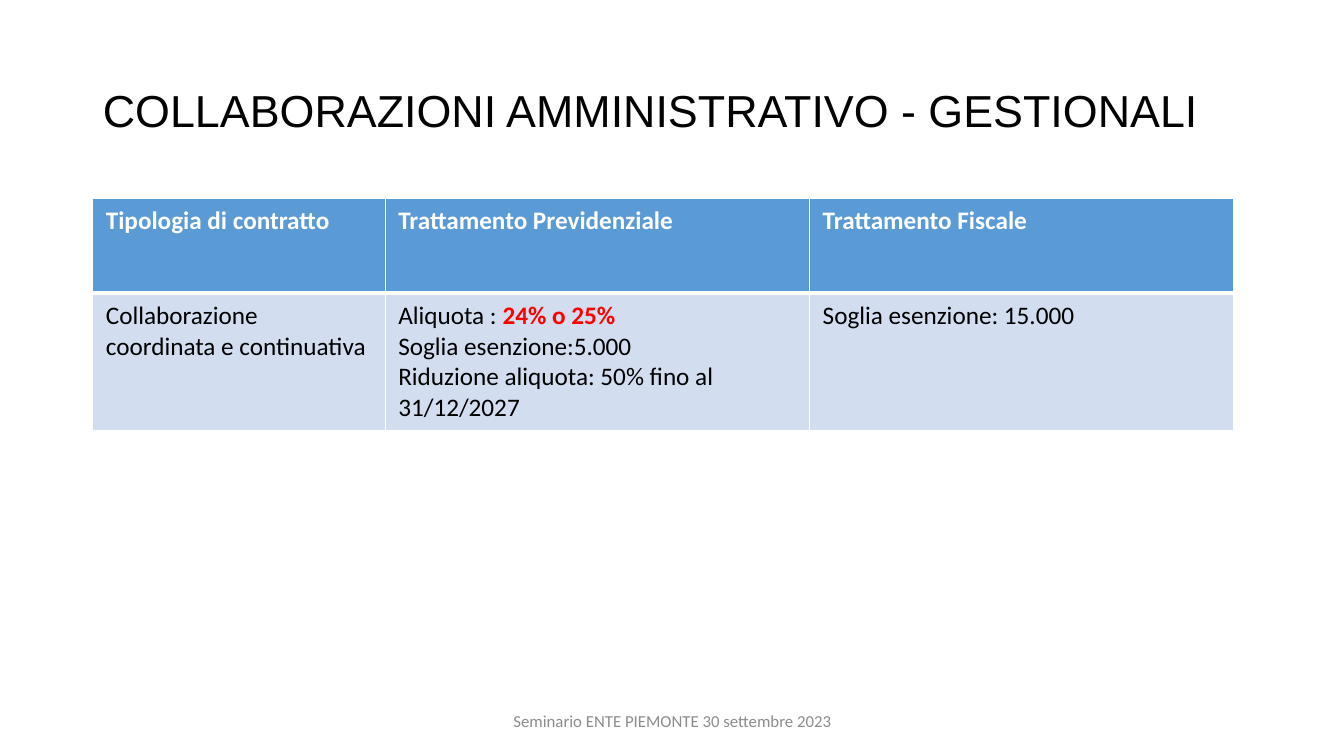
from lxml import etree
from pptx import Presentation
from pptx.dml.color import RGBColor
from pptx.enum.text import MSO_ANCHOR, PP_ALIGN
from pptx.oxml.ns import qn
from pptx.util import Inches, Pt

MIDDLE = MSO_ANCHOR.MIDDLE
LEFT, CENTER = PP_ALIGN.LEFT, PP_ALIGN.CENTER
TITLE_ONLY = 5

BLACK, WHITE, RED, GREY = "000000", "FFFFFF", "FF0000", "8C8C8C"
HEADER_BLUE, BODY_BLUE = "5B9BD5", "D2DEEF"

HEADINGS = ["Tipologia di contratto", "Trattamento Previdenziale", "Trattamento Fiscale"]
# Each cell is a list of paragraphs; a tuple is a plain lead and a highlighted rate.
CONTRACT = [
    ["Collaborazione coordinata e continuativa"],
    [("Aliquota : ", "24% o 25%"), "Soglia esenzione:5.000",
     "Riduzione aliquota: 50% fino al 31/12/2027"],
    ["Soglia esenzione: 15.000"],
]


def color(hex_code):
    return RGBColor.from_string(hex_code)


class SlideBuilder:
    def __init__(self, slide):
        self.slide = slide

    def style(self, font, size, hex_code, name="Calibri", bold=False):
        font.name, font.size, font.bold = name, Pt(size), bold
        font.color.rgb = color(hex_code)

    def place(self, shape, left, top, width, height):
        shape.left, shape.top = Inches(left), Inches(top)
        shape.width, shape.height = Inches(width), Inches(height)

    def title(self, text, *box):
        heading = self.slide.shapes.title
        self.place(heading, *box)
        frame = heading.text_frame
        frame.text, frame.vertical_anchor, frame.word_wrap = text, MIDDLE, True
        line = frame.paragraphs[0]
        line.alignment, line.line_spacing = LEFT, 0.9
        self.style(line.font, 32, BLACK, "Arial")

    def footer(self, text, *box):
        frame = self.slide.shapes.add_textbox(*map(Inches, box)).text_frame
        frame.text, frame.vertical_anchor, frame.word_wrap = text, MIDDLE, True
        line = frame.paragraphs[0]
        line.alignment = CENTER
        self.style(line.font, 12, GREY)

    def borders(self, cell, **widths):
        """Draw white borders, given in points as L, R, T and B."""
        properties = cell._tc.get_or_add_tcPr()
        for side, width in widths.items():
            edge = etree.SubElement(properties, qn(f"a:ln{side}"), w=str(Pt(width)))
            fill = etree.SubElement(edge, qn("a:solidFill"))
            etree.SubElement(fill, qn("a:srgbClr"), val=WHITE)

    def cell(self, cell, paragraphs, fill, hex_code, bold):
        cell.margin_left = cell.margin_right = Inches(0.13)
        cell.margin_top = cell.margin_bottom = Inches(0.07)
        cell.fill.solid()
        cell.fill.fore_color.rgb = color(fill)
        frame = cell.text_frame
        for i, content in enumerate(paragraphs):
            line = frame.add_paragraph() if i else frame.paragraphs[0]
            self.style(line.font, 18, hex_code, bold=bold)
            if isinstance(content, tuple):
                lead, rate = content
                line.add_run().text = lead
                highlight = line.add_run()
                highlight.text = rate
                highlight.font.bold = True
                highlight.font.color.rgb = color(RED)
            else:
                line.add_run().text = content

    def table(self, left, top, widths, heights):
        table = self.slide.shapes.add_table(
            len(heights), len(widths), Inches(left), Inches(top),
            Inches(sum(widths)), Inches(sum(heights))).table
        for column, width in zip(table.columns, widths):
            column.width = Inches(width)
        for row, height in zip(table.rows, heights):
            row.height = Inches(height)
        for i, (heading, details) in enumerate(zip(HEADINGS, CONTRACT)):
            header, body = table.cell(0, i), table.cell(1, i)
            self.borders(header, L=1, R=1, T=1, B=3)
            self.borders(body, L=1, R=1, T=3, B=1)
            self.cell(header, [heading], HEADER_BLUE, WHITE, True)
            self.cell(body, details, BODY_BLUE, BLACK, False)


def main():
    deck = Presentation()
    deck.slide_width, deck.slide_height = Inches(13.33), Inches(7.5)
    builder = SlideBuilder(deck.slides.add_slide(deck.slide_layouts[TITLE_ONLY]))
    builder.title("COLLABORAZIONI AMMINISTRATIVO - GESTIONALI", 0.92, 0.4, 11.5, 1.45)
    builder.table(0.92, 1.97, [2.9, 4.21, 4.21], [0.94, 1.34])
    builder.footer("Seminario ENTE PIEMONTE 30 settembre 2023", 4.42, 6.95, 4.5, 0.4)
    deck.save("out.pptx")


if __name__ == "__main__":
    main()
